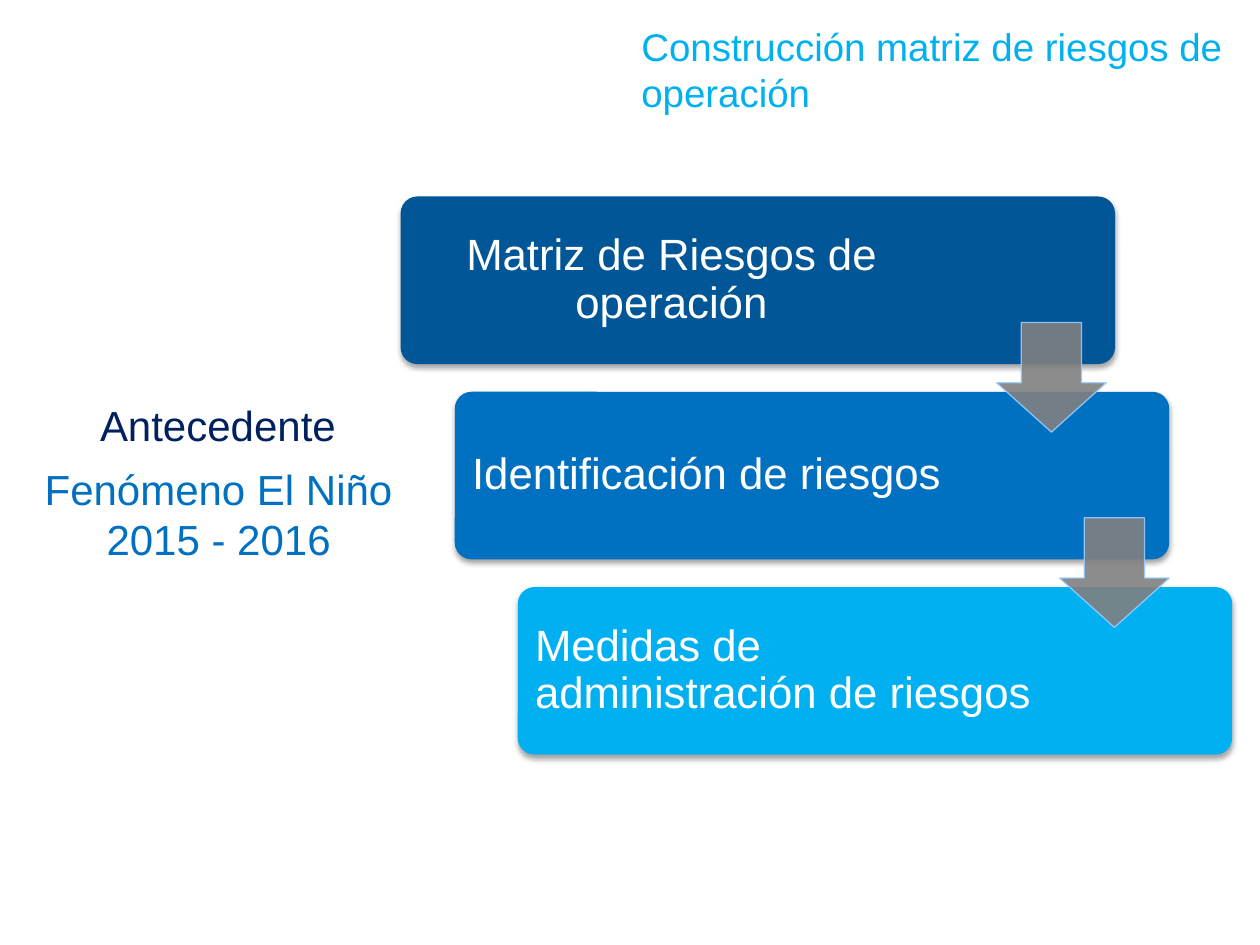
from lxml.etree import SubElement
from pptx import Presentation
from pptx.dml.color import RGBColor
from pptx.enum.shapes import MSO_SHAPE
from pptx.enum.text import MSO_ANCHOR, MSO_AUTO_SIZE, PP_ALIGN
from pptx.oxml import parse_xml
from pptx.oxml.ns import nsdecls, qn
from pptx.util import Inches, Pt

WHITE = RGBColor(0xFF, 0xFF, 0xFF)
NAVY = RGBColor(0x00, 0x20, 0x60)
DARK_BLUE = RGBColor(0x00, 0x56, 0x96)
BLUE = RGBColor(0x00, 0x70, 0xC0)
SKY = RGBColor(0x00, 0xB0, 0xF0)
GRAY = RGBColor(0x80, 0x80, 0x80)
PALE_BLUE = RGBColor(0x99, 0xCC, 0xFF)

SOFT_SHADOW = (
    f'<a:effectLst {nsdecls("a")}>'
    '<a:outerShdw blurRad="39370" dist="22860" dir="5400000" rotWithShape="0">'
    '<a:srgbClr val="000000"><a:alpha val="35000"/></a:srgbClr>'
    '</a:outerShdw></a:effectLst>'
)


def write(shape, text, size, color, align, anchor):
    frame = shape.text_frame
    frame.word_wrap = True
    frame.auto_size = MSO_AUTO_SIZE.NONE
    frame.vertical_anchor = anchor
    frame.text = text
    para = frame.paragraphs[0]
    para.alignment = align
    para.font.name = "Arial"
    para.font.size = Pt(size)
    para.font.color.rgb = color
    return para


deck = Presentation()
deck.slide_width, deck.slide_height = Inches(10), Inches(7.5)
slide = deck.slides.add_slide(deck.slide_layouts[5])

title = slide.shapes.title
title.left, title.top = Inches(4.99), Inches(0.13)
title.width, title.height = Inches(4.95), Inches(0.84)
write(title, "Construcción matriz de riesgos de operación", 22, SKY,
      PP_ALIGN.LEFT, MSO_ANCHOR.TOP)

# Background of the process, left of the steps
captions = [
    ("Antecedente", NAVY, 0.55, 3.12, 2.36, 0.5),
    ("Fenómeno El Niño 2015 - 2016", BLUE, 0.2, 3.63, 3.07, 0.91),
]
for text, color, left, top, width, height in captions:
    box = slide.shapes.add_textbox(Inches(left), Inches(top), Inches(width), Inches(height))
    write(box, text, 24, color, PP_ALIGN.CENTER, MSO_ANCHOR.TOP)

# Staircase of steps
FIRST_TOP, STEP_PITCH = 1.56, 1.55
steps = [
    ("Matriz de Riesgos de operación", DARK_BLUE, 3.18, PP_ALIGN.CENTER),
    ("Identificación de riesgos", BLUE, 3.61, PP_ALIGN.LEFT),
    ("Medidas de administración de riesgos", SKY, 4.11, PP_ALIGN.LEFT),
]
for index, (text, color, left, align) in enumerate(steps):
    step = slide.shapes.add_shape(
        MSO_SHAPE.ROUNDED_RECTANGLE, Inches(left),
        Inches(FIRST_TOP + index * STEP_PITCH), Inches(5.67), Inches(1.33))
    step.adjustments[0] = 0.1
    step.fill.solid()
    step.fill.fore_color.rgb = color
    step.line.fill.background()
    step._element.spPr.append(parse_xml(SOFT_SHADOW))
    para = write(step, text, 25, WHITE, align, MSO_ANCHOR.MIDDLE)
    para.line_spacing = 0.9
    step.text_frame.margin_left = Inches(0.1)
    step.text_frame.margin_right = Inches(1.47)

# An arrow leads into every step after the first
for index, (text, color, left, align) in enumerate(steps[1:], start=1):
    arrow = slide.shapes.add_shape(
        MSO_SHAPE.DOWN_ARROW, Inches(left + 4.3),
        Inches(FIRST_TOP + index * STEP_PITCH - 0.55), Inches(0.87), Inches(0.87))
    arrow.adjustments[0] = 0.55
    arrow.adjustments[1] = 0.45
    arrow.shadow.inherit = False
    arrow.fill.solid()
    arrow.fill.fore_color.rgb = GRAY
    arrow.line.color.rgb = PALE_BLUE
    arrow.line.width = Pt(0.75)
    for tint in arrow._element.spPr.iter(qn("a:srgbClr")):
        SubElement(tint, qn("a:alpha"), val="90000")

deck.save("out.pptx")
